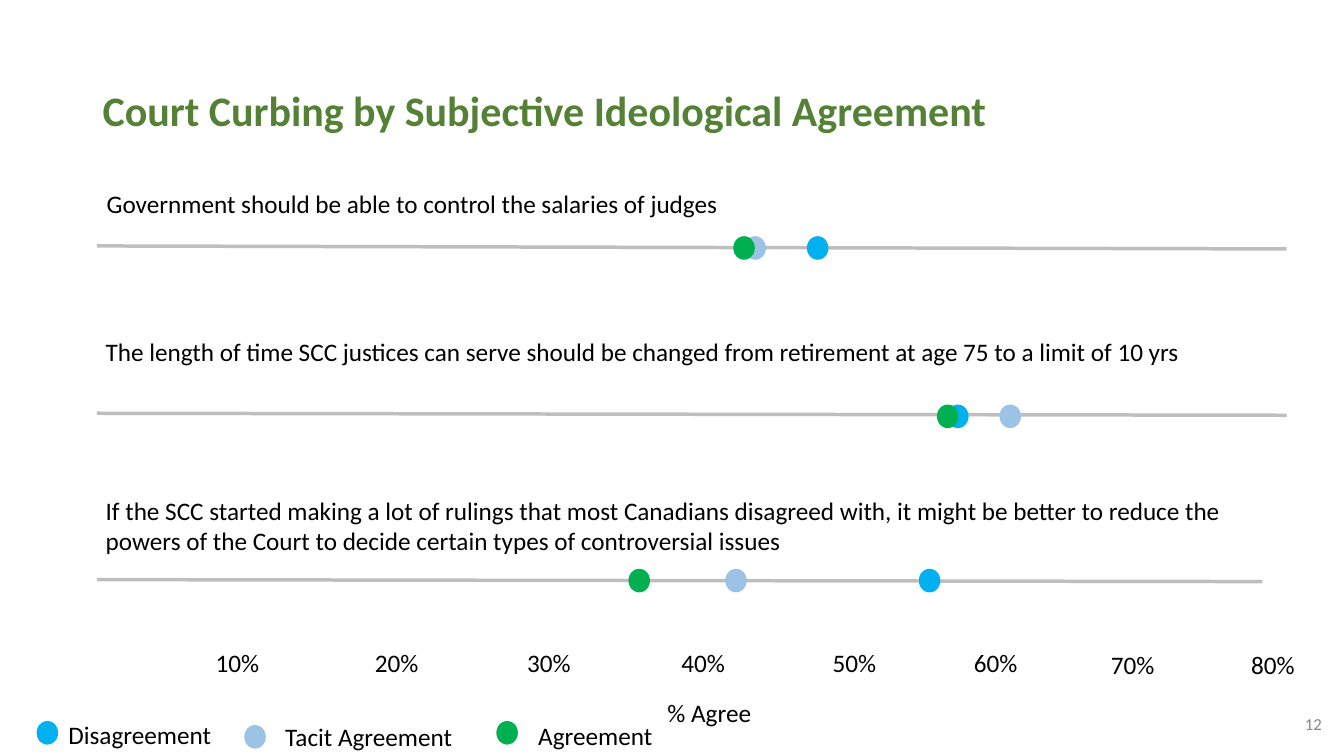
from lxml.etree import SubElement
from pptx import Presentation
from pptx.dml.color import RGBColor
from pptx.enum.shapes import MSO_CONNECTOR, MSO_SHAPE
from pptx.enum.text import MSO_ANCHOR, PP_ALIGN
from pptx.oxml.ns import qn
from pptx.util import Inches, Pt

BLACK = RGBColor(0x00, 0x00, 0x00)
TITLE_GREEN = RGBColor(0x54, 0x81, 0x35)
NUMBER_GREY = RGBColor(0x88, 0x88, 0x88)
SCALE_GREY = RGBColor(0x7F, 0x7F, 0x7F)
DISAGREEMENT = RGBColor(0x00, 0xB0, 0xF0)
TACIT = RGBColor(0x9C, 0xC2, 0xE5)
AGREEMENT = RGBColor(0x00, 0xB0, 0x50)
GROUPS = (DISAGREEMENT, TACIT, AGREEMENT)

SCALE_LEFT = 0.96
DOT_WIDTH, DOT_HEIGHT = 0.2, 0.22

# statement, its box, scale start y, scale end, dot top, dot lefts by group
QUESTIONS = [
    ("Government should be able to control the salaries of judges",
     (0.96, 1.82, 8.54, 0.4), 2.44, (12.76, 2.47), 2.35, (8.01, 7.39, 7.28)),
    ("The length of time SCC justices can serve should be changed from "
     "retirement at age 75 to a limit of 10 yrs",
     (0.95, 3.29, 11.8, 0.71), 4.1, (12.76, 4.12), 4.02, (9.4, 9.92, 9.3)),
    ("If the SCC started making a lot of rulings that most Canadians disagreed "
     "with, it might be better to reduce the powers of the Court to decide "
     "certain types of controversial issues",
     (0.95, 4.86, 11.8, 0.71), 5.75, (12.52, 5.77), 5.65, (9.12, 7.2, 6.24)),
]
TICKS = [(2.04, 6.37), (3.62, 6.37), (5.13, 6.37), (6.66, 6.37),
         (8.16, 6.37), (9.56, 6.37), (10.92, 6.39), (12.31, 6.39)]
LEGEND = [
    ("Disagreement", DISAGREEMENT, (0.37, 7.16), (0.58, 7.09, 1.95, 0.4)),
    ("Tacit Agreement", TACIT, (2.43, 7.2), (2.73, 7.11, 2.29, 0.4)),
    ("Agreement", AGREEMENT, (4.93, 7.16), (5.24, 7.1, 1.7, 0.4)),
]


def add_label(slide, wording, box, size=18, color=BLACK, bold=False,
              align=PP_ALIGN.LEFT, anchor=MSO_ANCHOR.TOP):
    """Add a wrapped one-paragraph text box and return its paragraph."""
    frame = slide.shapes.add_textbox(*map(Inches, box)).text_frame
    frame.word_wrap = True
    frame.vertical_anchor = anchor
    paragraph = frame.paragraphs[0]
    paragraph.alignment = align
    run = paragraph.add_run()
    run.text = wording
    run.font.name = "Calibri"
    run.font.size = Pt(size)
    run.font.bold = bold
    run.font.color.rgb = color
    return paragraph


def add_dot(slide, left, top, color):
    """Add the dot that marks one group."""
    dot = slide.shapes.add_shape(
        MSO_SHAPE.OVAL, *map(Inches, (left, top, DOT_WIDTH, DOT_HEIGHT)))
    dot.shadow.inherit = False
    dot.fill.solid()
    dot.fill.fore_color.rgb = color
    dot.line.color.rgb = color
    dot.line.width = Pt(1)


def add_scale(slide, start_y, end):
    """Add a half-transparent scale line."""
    scale = slide.shapes.add_connector(
        MSO_CONNECTOR.STRAIGHT, *map(Inches, (SCALE_LEFT, start_y, *end)))
    scale.line.color.rgb = SCALE_GREY
    scale.line.width = Pt(2.5)
    properties = scale._element.spPr
    color = properties.find(".//" + qn("a:srgbClr"))
    SubElement(color, qn("a:alpha"), val="50000")
    SubElement(properties, qn("a:effectLst"))


def add_question(slide, statement, box, start_y, end, dot_top, dot_lefts):
    """Add a statement with its scale and the dots of the three groups."""
    add_label(slide, statement, box)
    add_scale(slide, start_y, end)
    for left, color in zip(dot_lefts, GROUPS):
        add_dot(slide, left, dot_top, color)


def main():
    """Build the slide and save it."""
    deck = Presentation()
    deck.slide_width, deck.slide_height = Inches(13.33), Inches(7.5)
    slide = deck.slides.add_slide(deck.slide_layouts[6])

    title = add_label(slide, "Court Curbing by Subjective Ideological Agreement",
                      (0.92, 0.4, 11.5, 1.45), 30, TITLE_GREEN, True,
                      anchor=MSO_ANCHOR.MIDDLE)
    title.line_spacing = 0.9
    add_label(slide, "12", (10.21, 6.98, 3, 0.4), 12, NUMBER_GREY,
              align=PP_ALIGN.RIGHT, anchor=MSO_ANCHOR.MIDDLE)

    for question in QUESTIONS:
        add_question(slide, *question)

    for step, (left, top) in enumerate(TICKS, start=1):
        add_label(slide, f"{step * 10}%", (left, top, 0.72, 0.4))
    add_label(slide, "% Agree", (5.89, 6.87, 2.29, 0.4), align=PP_ALIGN.CENTER)

    for group, color, dot_place, box in LEGEND:
        add_dot(slide, *dot_place, color)
        add_label(slide, group, box)

    deck.save("out.pptx")


if __name__ == "__main__":
    main()
